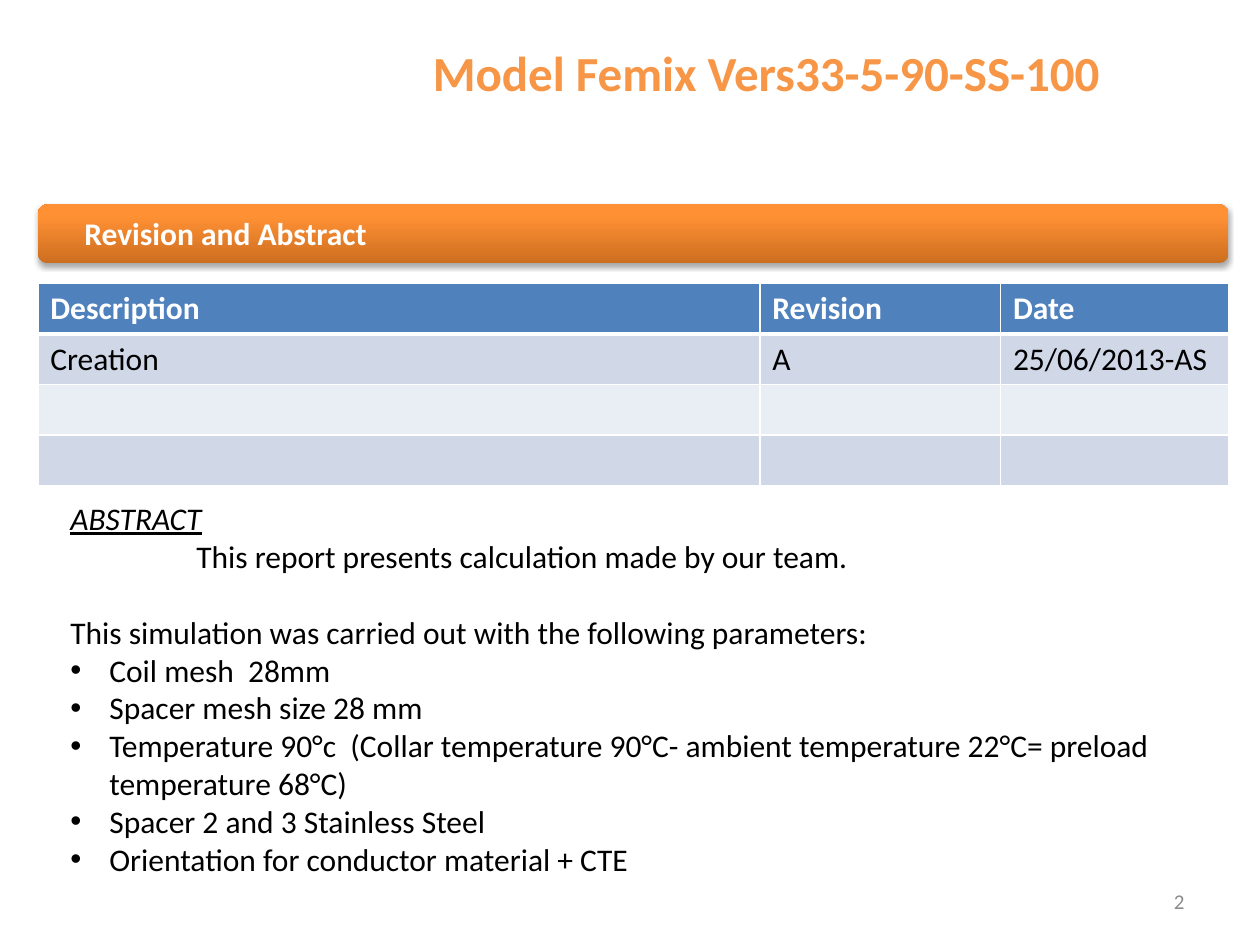
"""Build the revision and abstract slide of a simulation report."""
from dataclasses import dataclass, field

from lxml import etree
from pptx import Presentation
from pptx.dml.color import RGBColor
from pptx.enum import shapes, text
from pptx.oxml import ns
from pptx.util import Inches, Pt

FONT = "Calibri"
WHITE, BLACK, ORANGE, GREY = "FFFFFF", "000000", "F79646", "8C8C8C"
HEADER, BAND, LIGHT_BAND = "4F81BD", "D0D8E8", "E9EDF4"
ALIGN, ANCHOR, FIT = text.PP_ALIGN, text.MSO_ANCHOR, text.MSO_AUTO_SIZE


@dataclass
class Line:
    """One paragraph of text with its look."""
    words: str
    size: float = 18
    color: str = BLACK
    font: dict = field(default_factory=dict)
    layout: dict = field(default_factory=dict)
    indent: float = 0
    bullet: bool = False


@dataclass
class Area:
    """A rectangle in inches."""
    left: float
    top: float
    width: float
    height: float

    def lengths(self) -> list:
        """Return the rectangle as slide lengths."""
        return [Inches(n) for n in (self.left, self.top, self.width, self.height)]


def paint(value: str) -> RGBColor:
    """Turn a hex string into a colour."""
    return RGBColor.from_string(value)


def assign(target, values: dict) -> None:
    """Set attributes from a dict of format values."""
    for name, value in values.items():
        setattr(target, name, value)


def add_node(parent, tag: str, **attributes):
    """Append a drawing element to its parent."""
    return etree.SubElement(parent, ns.qn(tag), attributes)


def write(frame, lines: list[Line], **frame_format) -> None:
    """Fill a text frame with formatted paragraphs."""
    assign(frame, {"word_wrap": True} | frame_format)
    for index, line in enumerate(lines):
        para = frame.add_paragraph() if index else frame.paragraphs[0]
        if line.indent:
            properties = para._p.get_or_add_pPr()
            properties.set("marL", str(Inches(line.indent)))
            if line.bullet:
                properties.set("indent", str(-Inches(line.indent)))
                add_node(properties, "a:buFont", typeface="Arial")
                add_node(properties, "a:buChar", char="•")
        assign(para, line.layout)
        span = para.add_run()
        span.text = line.words
        assign(span.font, {"name": FONT, "size": Pt(line.size)} | line.font)
        span.font.color.rgb = paint(line.color)


def add_text(page, area: Area, lines: list[Line], **frame_format) -> None:
    """Add a text box."""
    box = page.shapes.add_textbox(*area.lengths())
    write(box.text_frame, lines, **frame_format)


def add_bar(page, area: Area) -> None:
    """Add the shaded section bar with its soft shadow."""
    bar = page.shapes.add_shape(shapes.MSO_SHAPE.ROUNDED_RECTANGLE, *area.lengths())
    bar.line.fill.background()
    bar.fill.gradient()
    bar.fill.gradient_angle = 90
    for stop, (position, color) in zip(bar.fill.gradient_stops, ((0, "CC6E20"), (0.8, "FF9034"))):
        stop.position = position
        stop.color.rgb = paint(color)
    bar.shadow.inherit = False
    effects = bar._element.spPr.find(ns.qn("a:effectLst"))
    shadow = add_node(effects, "a:outerShdw", blurRad=str(Pt(3.1)), dist=str(Pt(1.8)),
                      dir="5400000", rotWithShape="0")
    add_node(add_node(shadow, "a:srgbClr", val=BLACK), "a:alpha", val="35000")


def add_borders(cell, widths: dict[str, float]) -> None:
    """Draw white cell borders ahead of the cell fill."""
    properties = cell._tc.get_or_add_tcPr()
    for index, (side, width) in enumerate(widths.items()):
        border = etree.Element(ns.qn(f"a:ln{side}"), w=str(Pt(width)))
        add_node(add_node(border, "a:solidFill"), "a:srgbClr", val=WHITE)
        properties.insert(index, border)


def add_revisions(page, area: Area, widths: list[float], rows: list[list[str]]) -> None:
    """Add the banded revision table."""
    table = page.shapes.add_table(len(rows), len(widths), *area.lengths()).table
    for column, width in zip(table.columns, widths):
        column.width = Inches(width)
    for r, row in enumerate(rows):
        fill = HEADER if r == 0 else BAND if r % 2 else LIGHT_BAND
        for c, words in enumerate(row):
            cell = table.cell(r, c)
            cell.fill.solid()
            cell.fill.fore_color.rgb = paint(fill)
            add_borders(cell, {"L": 1, "R": 1, "T": 3 if r == 1 else 1, "B": 3 if r == 0 else 1})
            if words:
                color = BLACK if r else WHITE
                write(cell.text_frame, [Line(words, color=color, font={"bold": r == 0})])


def main() -> None:
    """Build and save the deck."""
    deck = Presentation()
    deck.slide_width, deck.slide_height = Inches(10), Inches(7.5)
    page = deck.slides.add_slide(deck.slide_layouts[5])

    title = page.shapes.title
    assign(title, dict(zip(("left", "top", "width", "height"),
                           Area(3.27, 0.29, 5.62, 0.57).lengths())))
    write(title.text_frame,
          [Line("Model Femix Vers33-5-90-SS-100", 28, ORANGE, {"bold": True},
                {"alignment": ALIGN.CENTER})],
          word_wrap=False, vertical_anchor=ANCHOR.TOP, auto_size=FIT.SHAPE_TO_FIT_TEXT)

    add_text(page, Area(7.17, 6.95, 2.33, 0.4),
             [Line("2", 12, GREY, layout={"alignment": ALIGN.RIGHT})],
             vertical_anchor=ANCHOR.MIDDLE)

    add_bar(page, Area(0.3, 1.62, 9.45, 0.47))
    sides = ("left", "top", "right", "bottom")
    add_text(page, Area(0.6, 1.65, 9.4, 0.43),
             [Line("Revision and Abstract", color=WHITE, font={"bold": True},
                   layout={"alignment": ALIGN.JUSTIFY, "line_spacing": 0.9})],
             vertical_anchor=ANCHOR.MIDDLE,
             **{f"margin_{side}": Inches(0.07) for side in sides})

    add_revisions(page, Area(0.3, 2.25, 9.45, 1.6), [5.73, 1.91, 1.81], [
        ["Description", "Revision", "Date"],
        ["Creation", "A", "25/06/2013-AS"],
        [""] * 3,
        [""] * 3,
    ])

    parameters = [
        "Coil mesh  28mm",
        "Spacer mesh size 28 mm",
        "Temperature 90°c  (Collar temperature 90°C- ambient temperature 22°C= "
        "preload temperature 68°C)",
        "Spacer 2 and 3 Stainless Steel",
        "Orientation for conductor material + CTE",
    ]
    add_text(page, Area(0.46, 3.91, 9.29, 3.13), [
        Line("ABSTRACT", font={"italic": True, "underline": True}),
        Line("This report presents calculation made by our team.", indent=1),
        Line("This simulation was carried out with the following parameters:",
             layout={"space_before": Pt(22)}),
        *(Line(words, indent=0.31, bullet=True) for words in parameters),
    ], auto_size=FIT.SHAPE_TO_FIT_TEXT)

    deck.save("out.pptx")


if __name__ == "__main__":
    main()
